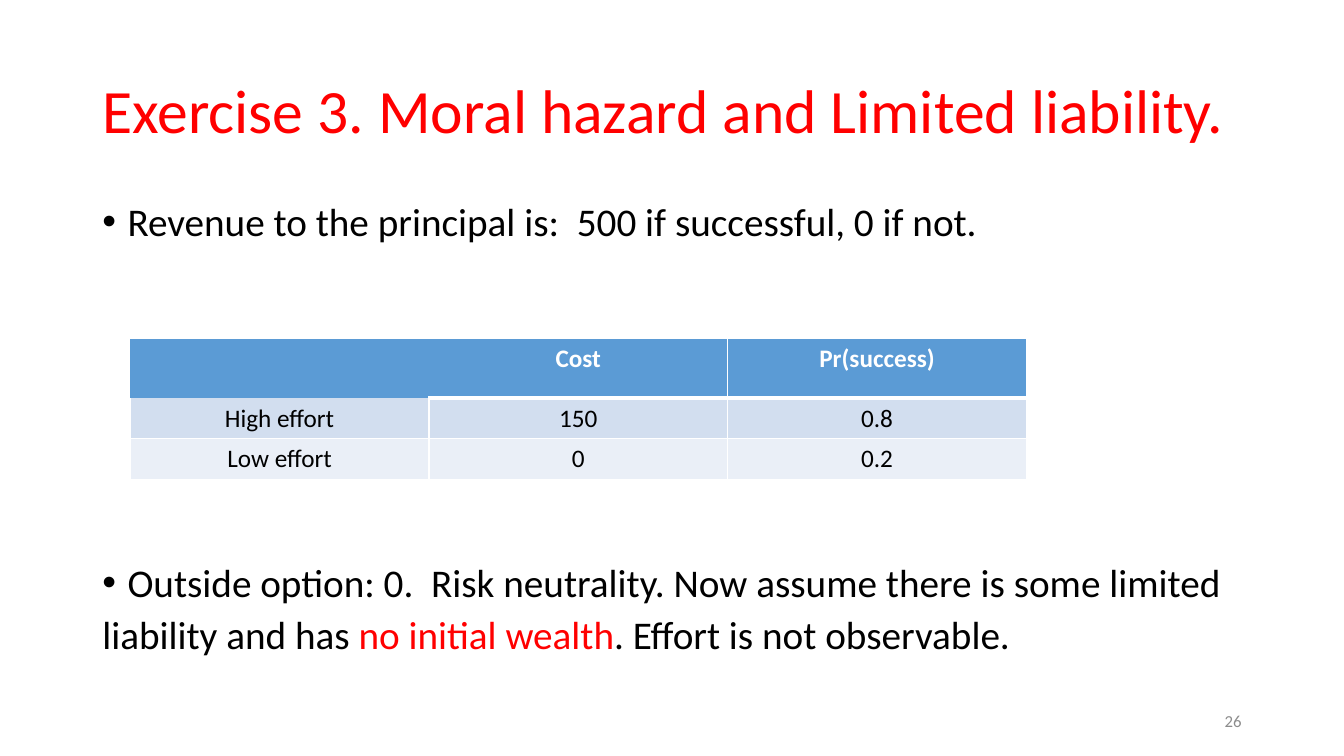
"""Build a slide on moral hazard with a table of effort, cost and success."""
from dataclasses import dataclass

import lxml.etree
import pptx
import pptx.dml.color
import pptx.enum.text
import pptx.oxml.ns
import pptx.util

RGBColor = pptx.dml.color.RGBColor
Align = pptx.enum.text.PP_ALIGN
Anchor = pptx.enum.text.MSO_ANCHOR

RED = RGBColor(0xFF, 0x00, 0x00)
BLACK = RGBColor(0x00, 0x00, 0x00)
WHITE = RGBColor(0xFF, 0xFF, 0xFF)
GRAY = RGBColor(0x8C, 0x8C, 0x8C)
BLUE = RGBColor(0x5B, 0x9B, 0xD5)
PALE = RGBColor(0xD2, 0xDE, 0xEF)
LIGHT = RGBColor(0xEA, 0xEF, 0xF7)

FONT = "Calibri"
COLS, ROWS = 160, 90
WIDE, HIGH = pptx.util.Inches(13.33), pptx.util.Inches(7.5)


@dataclass(frozen=True)
class Run:
    text: str
    color: RGBColor = BLACK
    bold: bool = False


@dataclass(frozen=True)
class Para:
    runs: tuple[Run, ...]
    size: float
    lead: float = 1.0
    before: float = 0
    align: Align = Align.LEFT
    bullet: bool = False


@dataclass(frozen=True)
class Box:
    left: float
    top: float
    width: float
    height: float
    paras: tuple[Para, ...]
    anchor: Anchor = Anchor.TOP


@dataclass(frozen=True)
class Row:
    height: float
    fill: RGBColor
    ink: RGBColor
    bold: bool
    cells: tuple[str, ...]


TEXTS = (
    Box(11, 4.8, 138, 17.4,
        (Para((Run("Exercise 3. Moral hazard and Limited liability.", RED),), 44, 0.9),),
        Anchor.MIDDLE),
    Box(11, 24, 138, 7,
        (Para((Run("Revenue to the principal is:  500 if successful, 0 if not."),),
              28, 0.8, bullet=True),)),
    Box(11, 67, 138, 14, (
        Para((Run("Outside option: 0.  Risk neutrality. Now assume there is some limited"),),
             28, 0.8, bullet=True),
        Para((Run("liability and has "), Run("no initial wealth", RED),
              Run(". Effort is not observable.")), 28, 0.8, 10))),
    Box(113, 83.4, 36, 4.8,
        (Para((Run("26", GRAY),), 12, align=Align.RIGHT),), Anchor.MIDDLE),
)

EFFORT = (
    Row(7.1, BLUE, WHITE, True, ("", "Cost", "Pr(success)")),
    Row(4.85, PALE, BLACK, False, ("High effort", "150", "0.8")),
    Row(4.85, LIGHT, BLACK, False, ("Low effort", "0", "0.2")),
)


def across(count: float) -> int:
    return round(WIDE * count / COLS)


def down(count: float) -> int:
    return round(HIGH * count / ROWS)


def add_sub(node, tag: str, **attrs: str):
    return lxml.etree.SubElement(node, pptx.oxml.ns.qn(tag), attrs)


def write(line, para: Para) -> None:
    props = line._p.get_or_add_pPr()
    if para.bullet:
        indent = pptx.util.Inches(0.25)
        props.set("marL", str(indent))
        props.set("indent", str(-indent))
        add_sub(props, "a:buFont", typeface="Arial")
        add_sub(props, "a:buChar", char="•")
    line.alignment = para.align
    line.line_spacing = para.lead
    line.space_before = pptx.util.Pt(para.before)
    for item in para.runs:
        run = line.add_run()
        run.text = item.text
        run.font.name = FONT
        run.font.size = pptx.util.Pt(para.size)
        run.font.bold = item.bold
        run.font.color.rgb = item.color


def draw_text(slide, box: Box) -> None:
    shape = slide.shapes.add_textbox(
        across(box.left), down(box.top), across(box.width), down(box.height))
    frame = shape.text_frame
    frame.word_wrap = True
    frame.vertical_anchor = box.anchor
    for index, para in enumerate(box.paras):
        line = frame.add_paragraph() if index else frame.paragraphs[0]
        write(line, para)


def draw_edge(cell, side: str, width: float) -> None:
    props = cell._tc.get_or_add_tcPr()
    edge = add_sub(props, f"a:ln{side}", w=str(pptx.util.Pt(width)))
    if width:
        fill = add_sub(edge, "a:solidFill")
        add_sub(fill, "a:srgbClr", val=str(WHITE))
    else:
        add_sub(edge, "a:noFill")


def edges(row: int, col: int) -> dict[str, float]:
    if (row, col) == (0, 0):
        return dict.fromkeys("LRTB", 0)
    return {
        "L": 0 if (row, col) == (0, 1) else 1,
        "R": 1,
        "T": 0 if (row, col) == (1, 0) else 3 if row == 1 else 1,
        "B": 3 if row == 0 else 1,
    }


def draw_table(slide, rows: tuple[Row, ...]) -> None:
    count = len(rows[0].cells)
    width = 106.7
    table = slide.shapes.add_table(
        len(rows), count, across(15.5), down(40.3), across(width),
        down(sum(row.height for row in rows))).table
    table.first_row = False
    table.horz_banding = False
    for column in table.columns:
        column.width = across(width / count)
    for r, row in enumerate(rows):
        table.rows[r].height = down(row.height)
        for c, text in enumerate(row.cells):
            cell = table.cell(r, c)
            for side, weight in edges(r, c).items():
                draw_edge(cell, side, weight)
            cell.fill.solid()
            cell.fill.fore_color.rgb = row.fill
            if text:
                run = Run(text, row.ink, row.bold)
                write(cell.text_frame.paragraphs[0],
                      Para((run,), 18, align=Align.CENTER))


def main() -> None:
    deck = pptx.Presentation()
    deck.slide_width, deck.slide_height = WIDE, HIGH
    slide = deck.slides.add_slide(deck.slide_layouts[6])
    for box in TEXTS:
        draw_text(slide, box)
    draw_table(slide, EFFORT)
    deck.save("out.pptx")


if __name__ == "__main__":
    main()
